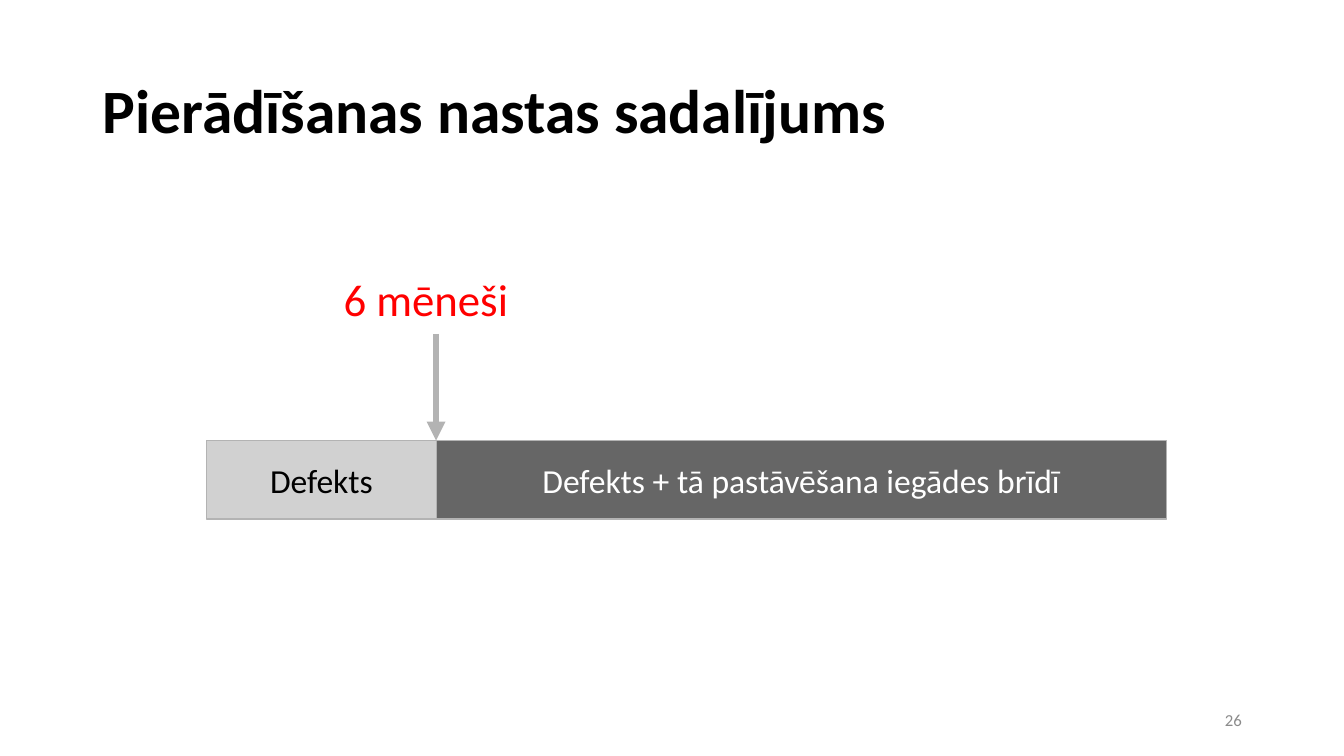
from dataclasses import dataclass

from lxml.etree import SubElement
from pptx import Presentation
from pptx.dml.color import RGBColor
from pptx.enum.shapes import MSO_CONNECTOR, MSO_SHAPE
from pptx.enum.text import MSO_ANCHOR, PP_ALIGN
from pptx.oxml.ns import qn
from pptx.util import Cm, Pt


@dataclass(frozen=True)
class Theme:
    font: str = "Calibri"
    black: str = "000000"
    white: str = "FFFFFF"
    red: str = "FF0000"
    muted: str = "8B8B8B"
    light: str = "B3B3B3"
    dark: str = "666666"
    title_size: int = 44
    label_size: int = 32
    bar_size: int = 24
    number_size: int = 12
    arrow_width: float = 4.5


THEME = Theme()


def write(s, text, size, color, align=PP_ALIGN.LEFT, anchor=MSO_ANCHOR.MIDDLE):
    tf = s.text_frame
    tf.word_wrap = True
    tf.vertical_anchor = anchor
    tf.text = text
    p = tf.paragraphs[0]
    p.alignment = align
    r = p.runs[0]
    r.font.name = THEME.font
    r.font.size = Pt(size)
    r.font.color.rgb = RGBColor.from_string(color)
    return p


def add_text(slide, box, *args, **kwargs):
    sp = slide.shapes.add_textbox(*map(Cm, box))
    return write(sp, *args, **kwargs)


def add_title(slide, box, text):
    p = add_text(slide, box, text, THEME.title_size, THEME.black)
    p.line_spacing = 0.9
    p.runs[0].font.bold = True


def add_page_number(slide, box, number):
    add_text(slide, box, number, THEME.number_size, THEME.muted, PP_ALIGN.RIGHT)


def add_period(slide, box, text, fill, color, opacity=100):
    sp = slide.shapes.add_shape(MSO_SHAPE.RECTANGLE, *map(Cm, box))
    sp.shadow.inherit = False
    sp.fill.solid()
    sp.fill.fore_color.rgb = RGBColor.from_string(fill)
    if opacity < 100:
        rgb = sp.fill._xPr.find(f"{qn('a:solidFill')}/{qn('a:srgbClr')}")
        SubElement(rgb, qn("a:alpha"), val=str(opacity * 1000))
    sp.line.color.rgb = RGBColor.from_string(THEME.light)
    sp.line.width = Pt(0)
    write(sp, text, THEME.bar_size, color, PP_ALIGN.CENTER)


def add_arrow(slide, x, top, bottom):
    s = slide.shapes.add_connector(
        MSO_CONNECTOR.STRAIGHT, Cm(x), Cm(top), Cm(x), Cm(bottom))
    s.line.color.rgb = RGBColor.from_string(THEME.light)
    s.line.width = Pt(THEME.arrow_width)
    SubElement(s.line._get_or_add_ln(), qn("a:tailEnd"), type="triangle")
    SubElement(s._element.spPr, qn("a:effectLst"))


def add_timeline(slide, box):
    left, top, width, height = box
    bar_height = 1.98
    first_width = 5.78
    bar_top = top + height - bar_height
    split = left + first_width

    # Periods before and after the limit
    add_period(slide, (left, bar_top, first_width, bar_height),
               "Defekts", THEME.light, THEME.black, opacity=60)
    add_period(slide, (split, bar_top, width - first_width, bar_height),
               "Defekts + tā pastāvēšana iegādes brīdī", THEME.dark, THEME.white)

    # Limit label and its arrow
    add_text(slide, (split - 2.58, top, 5.69, 1.6), "6 mēneši",
             THEME.label_size, THEME.red, anchor=MSO_ANCHOR.TOP)
    add_arrow(slide, split, top + 1.7, bar_top)


def main():
    prs = Presentation()
    prs.slide_width, prs.slide_height = Cm(33.87), Cm(19.05)
    slide = prs.slides.add_slide(prs.slide_layouts[6])
    add_title(slide, (2.34, 1.02, 30.18, 3.68), "Pierādīšanas nastas sadalījums")
    add_timeline(slide, (5.21, 6.71, 24.18, 6.37))
    add_page_number(slide, (23.93, 17.65, 7.62, 0.99), "26")
    prs.save("out.pptx")


if __name__ == "__main__":
    main()
